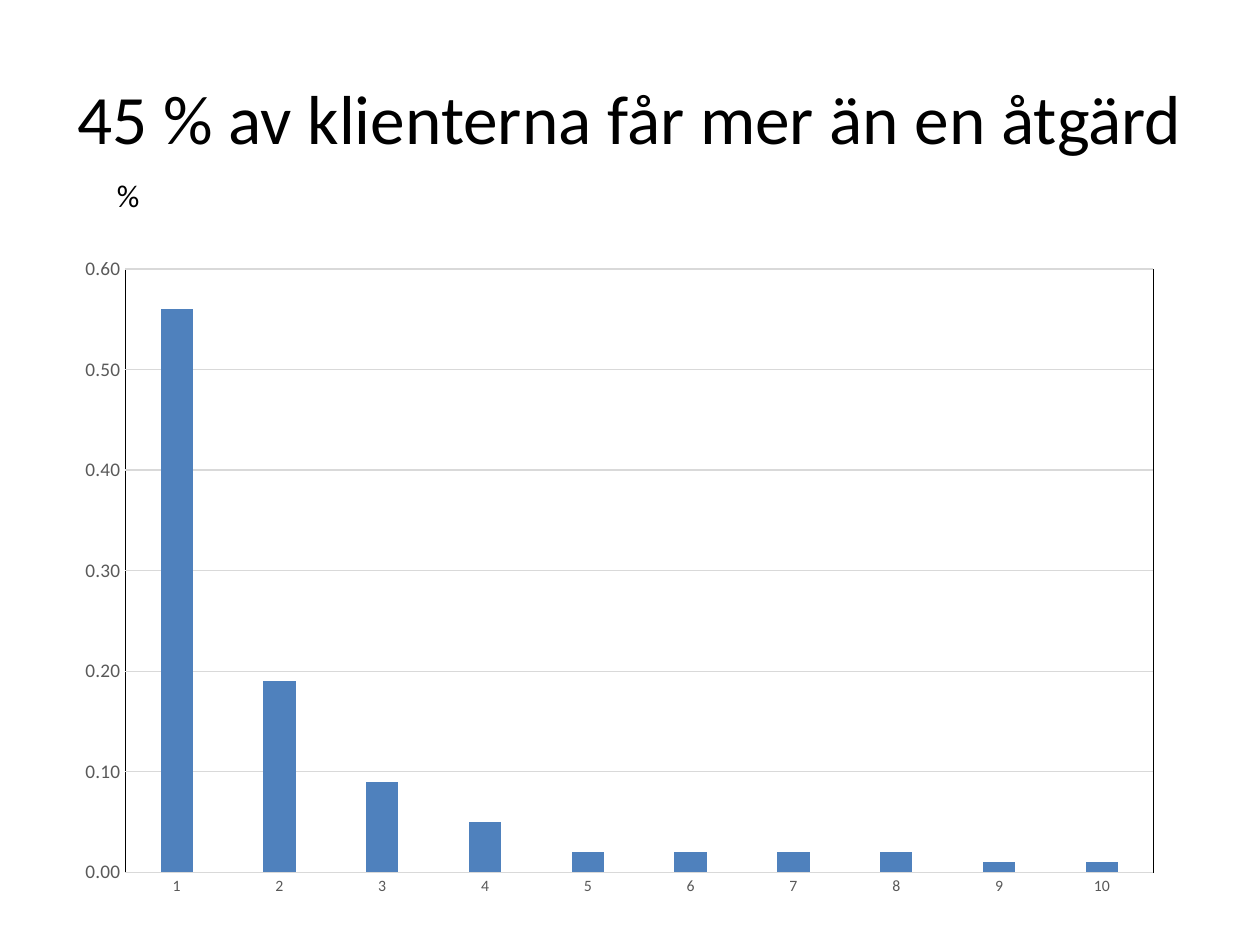
"""Build a slide with a column chart of the share of clients by number of measures."""
from lxml import etree
from pptx import Presentation
from pptx.chart.data import CategoryChartData
from pptx.dml.color import RGBColor
from pptx.enum.chart import XL_CHART_TYPE, XL_TICK_MARK
from pptx.enum.text import MSO_ANCHOR, MSO_AUTO_SIZE, PP_ALIGN
from pptx.oxml import parse_xml
from pptx.oxml.ns import nsdecls, qn
from pptx.util import Inches, Pt

COLUMN_CLUSTERED = XL_CHART_TYPE.COLUMN_CLUSTERED
NO_TICK = XL_TICK_MARK.NONE
MIDDLE = MSO_ANCHOR.MIDDLE
CENTER = PP_ALIGN.CENTER
FIT_SHAPE = MSO_AUTO_SIZE.SHAPE_TO_FIT_TEXT

BLACK = RGBColor(0x00, 0x00, 0x00)
GRAY = RGBColor(0x59, 0x59, 0x59)
LIGHT_GRAY = RGBColor(0xD9, 0xD9, 0xD9)
BLUE = RGBColor(0x4F, 0x81, 0xBD)
FONT = "Calibri"
SHARES = [0.56, 0.19, 0.09, 0.05, 0.02, 0.02, 0.02, 0.02, 0.01, 0.01]


def style_font(font, size, color):
    font.name = FONT
    font.size = Pt(size)
    font.color.rgb = color


prs = Presentation()
prs.slide_width = Inches(10)
prs.slide_height = Inches(7.5)
slide = prs.slides.add_slide(prs.slide_layouts[6])

title = slide.shapes.add_textbox(Inches(0.5), Inches(0.3), Inches(9), Inches(1.25)).text_frame
title.word_wrap = True
title.vertical_anchor = MIDDLE
heading = title.paragraphs[0]
heading.text = "45 % av klienterna får mer än en åtgärd"
heading.alignment = CENTER
style_font(heading.font, 39.6, BLACK)

unit = slide.shapes.add_textbox(Inches(0.83), Inches(1.35), Inches(0.38), Inches(0.4)).text_frame
unit.word_wrap = False
unit.auto_size = FIT_SHAPE
unit.paragraphs[0].text = "%"
style_font(unit.paragraphs[0].font, 18, BLACK)

share_data = CategoryChartData(number_format="0.00")
share_data.categories = [str(count) for count in range(1, len(SHARES) + 1)]
share_data.add_series("Series 1", SHARES)
chart = slide.shapes.add_chart(
    COLUMN_CLUSTERED, Inches(0.5), Inches(1.94), Inches(8.83), Inches(5.28), share_data
).chart
chart.has_title = False
chart.has_legend = False
style_font(chart.font, 10, BLACK)

columns = chart.plots[0]
columns.gap_width = 219
columns.overlap = -27
columns.vary_by_categories = False
columns.series[0].format.fill.solid()
columns.series[0].format.fill.fore_color.rgb = BLUE

measures = chart.category_axis
shares = chart.value_axis
for axis, size in ((measures, 9), (shares, 11)):
    axis.major_tick_mark = NO_TICK
    axis.minor_tick_mark = NO_TICK
    style_font(axis.tick_labels.font, size, GRAY)

shares.minimum_scale = 0
shares.maximum_scale = 0.6
shares.major_unit = 0.1
shares.tick_labels.number_format = "0.00"
shares.tick_labels.number_format_is_linked = False
shares.format.line.fill.background()
shares.has_major_gridlines = True
for line in (measures.format.line, shares.major_gridlines.format.line):
    line.width = Pt(0.75)
    line.color.rgb = LIGHT_GRAY

plot_area = chart.plots[0]._element.getparent()
for old_layout in plot_area.findall(qn("c:layout")):
    plot_area.remove(old_layout)
layout = parse_xml(f"<c:layout {nsdecls('c')}><c:manualLayout/></c:layout>")
for tag, value in (
    ("layoutTarget", "inner"), ("xMode", "edge"), ("yMode", "edge"),
    ("x", "0.056"), ("y", "0.037"), ("w", "0.924"), ("h", "0.907"),
):
    etree.SubElement(layout[0], qn(f"c:{tag}")).set("val", value)
plot_area.insert(0, layout)
plot_area.append(parse_xml(
    f"<c:spPr {nsdecls('c', 'a')}><a:noFill/><a:ln><a:solidFill>"
    f'<a:srgbClr val="{BLACK}"/></a:solidFill></a:ln></c:spPr>'
))

prs.save("out.pptx")
